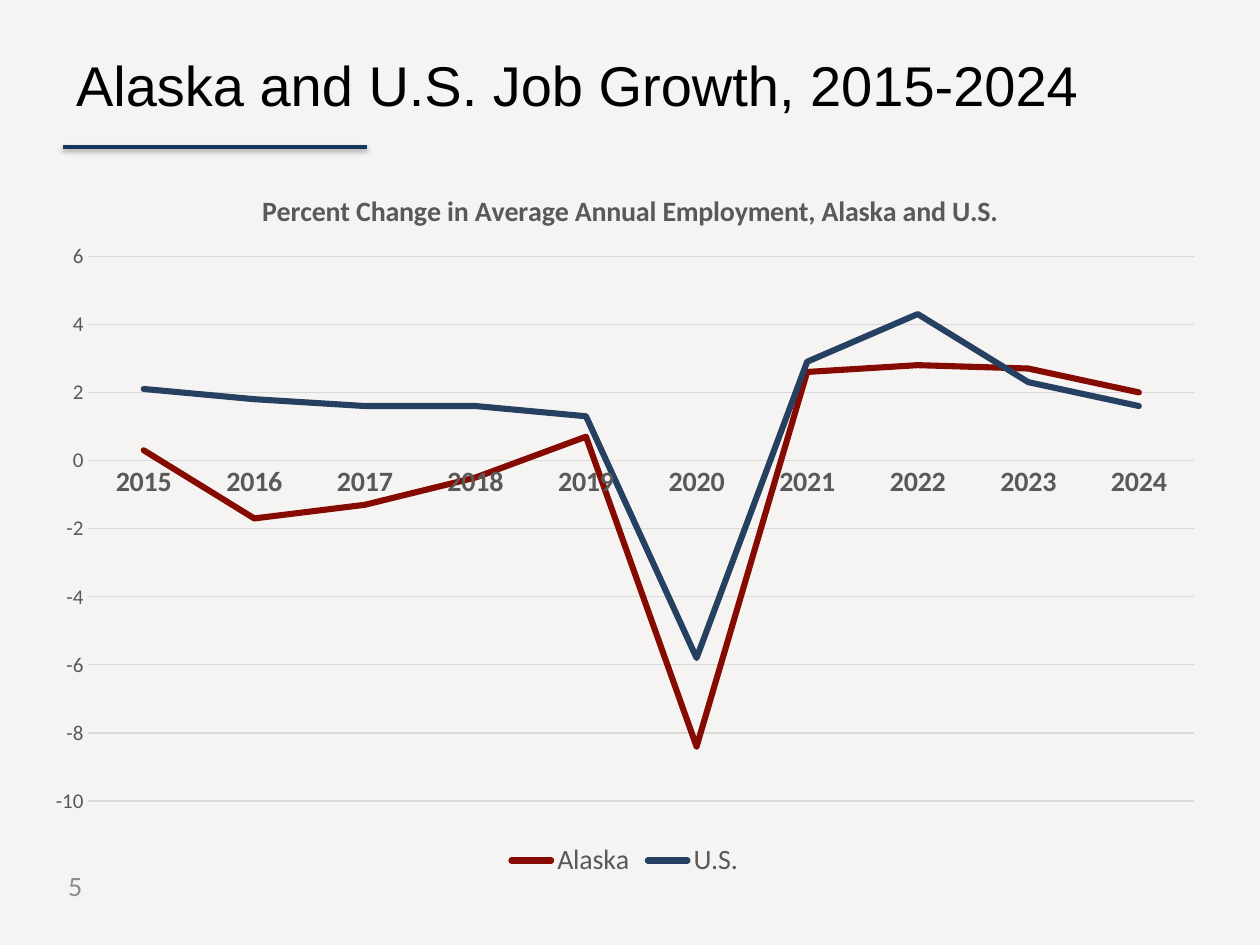
from typing import NamedTuple

from lxml import etree
from pptx import Presentation
from pptx.chart.data import CategoryChartData
from pptx.dml.color import RGBColor
from pptx.enum.chart import XL_CHART_TYPE, XL_LEGEND_POSITION, XL_TICK_MARK
from pptx.enum.shapes import MSO_CONNECTOR
from pptx.enum.text import MSO_ANCHOR, PP_ALIGN
from pptx.oxml import parse_xml
from pptx.oxml.ns import nsdecls, qn
from pptx.util import Pt

LINE_CHART = XL_CHART_TYPE.LINE
LEGEND_BOTTOM = XL_LEGEND_POSITION.BOTTOM
NO_TICK = XL_TICK_MARK.NONE
STRAIGHT = MSO_CONNECTOR.STRAIGHT
MIDDLE = MSO_ANCHOR.MIDDLE
LEFT, RIGHT = PP_ALIGN.LEFT, PP_ALIGN.RIGHT

GRAY, GRID = "595959", "D9D9D9"


class Label(NamedTuple):
    text: str
    left: float
    top: float
    width: float
    height: float
    size: float
    font: str
    color: str
    align: PP_ALIGN
    margin_left: float = 7.2


class Series(NamedTuple):
    name: str
    color: str
    values: tuple[float, ...]


LABELS = [
    Label("5", 0, 491.76, 54, 28.8, 16, "Calibri", "8C8C8C", RIGHT),
    Label("Alaska and U.S. Job Growth, 2015-2024", 27.36, 25.2, 660, 46,
          32, "Arial", "000000", LEFT, 16.1),
]
YEARS = [str(year) for year in range(2015, 2025)]
SERIES = [
    Series("Alaska", "850A01", (0.3, -1.7, -1.3, -0.5, 0.7, -8.4, 2.6, 2.8, 2.7, 2)),
    Series("U.S.", "254061", (2.1, 1.8, 1.6, 1.6, 1.3, -5.8, 2.9, 4.3, 2.3, 1.6)),
]


def rgb(color: str) -> RGBColor:
    return RGBColor.from_string(color)


def set_font(font, size: float, color: str = GRAY, bold: bool = False,
             name: str = "Calibri") -> None:
    font.size, font.bold, font.name = Pt(size), bold, name
    font.color.rgb = rgb(color)


def set_line(line, color: str, width: float) -> None:
    line.color.rgb = rgb(color)
    line.width = Pt(width)


def add_label(slide, label: Label) -> None:
    s = slide.shapes.add_textbox(Pt(label.left), Pt(label.top),
                                 Pt(label.width), Pt(label.height))
    tf = s.text_frame
    tf.word_wrap = True
    tf.vertical_anchor = MIDDLE
    tf.margin_left = Pt(label.margin_left)
    p = tf.paragraphs[0]
    p.alignment = label.align
    r = p.add_run()
    r.text = label.text
    set_font(r.font, label.size, label.color, name=label.font)


def add_title_rule(slide) -> None:
    s = slide.shapes.add_connector(STRAIGHT, Pt(36), Pt(84), Pt(210), Pt(84))
    set_line(s.line, "17375E", 2)
    s._element.spPr.append(parse_xml(
        f'<a:effectLst {nsdecls("a")}><a:outerShdw blurRad="{Pt(3.1)}" '
        f'dist="{Pt(1.6)}" dir="5400000" rotWithShape="0">'
        '<a:srgbClr val="000000"><a:alpha val="38000"/></a:srgbClr>'
        '</a:outerShdw></a:effectLst>'))


def place(element, inner: bool = False, **fractions: float) -> None:
    """Fix a chart part's position as fractions of the chart area."""
    for old in element.findall(qn("c:layout")):
        element.remove(old)
    layout = etree.Element(qn("c:layout"))
    manual = etree.SubElement(layout, qn("c:manualLayout"))
    if inner:
        etree.SubElement(manual, qn("c:layoutTarget"), val="inner")
    for key in ("x", "y"):
        etree.SubElement(manual, qn(f"c:{key}Mode"), val="edge")
    for key, value in fractions.items():
        etree.SubElement(manual, qn(f"c:{key}"), val=str(value))
    text = element.find(qn("c:tx"))
    if text is None:
        element.insert(0, layout)
    else:
        text.addnext(layout)


def add_growth_chart(slide) -> None:
    data = CategoryChartData(number_format="General")
    data.categories = YEARS
    for series in SERIES:
        data.add_series(series.name, series.values)
    chart = slide.shapes.add_chart(LINE_CHART, Pt(18), Pt(90), Pt(678),
                                   Pt(414.72), data).chart
    set_font(chart.font, 10, "000000")

    chart.has_title = True
    r = chart.chart_title.text_frame.paragraphs[0].add_run()
    r.text = "Percent Change in Average Annual Employment, Alaska and U.S."
    set_font(r.font, 16, bold=True)
    chart.chart_title.include_in_layout = False
    place(chart.chart_title._element, x=0.19, y=0.04)

    chart.has_legend = True
    chart.legend.position = LEGEND_BOTTOM
    chart.legend.include_in_layout = False
    set_font(chart.legend.font, 16)

    years, percent = chart.category_axis, chart.value_axis
    for axis in (years, percent):
        axis.major_tick_mark = axis.minor_tick_mark = NO_TICK
    set_font(years.tick_labels.font, 16, bold=True)
    set_line(years.format.line, GRID, 0.75)

    set_font(percent.tick_labels.font, 12)
    percent.tick_labels.number_format = "#,##0"
    percent.tick_labels.number_format_is_linked = False
    percent.minimum_scale, percent.maximum_scale, percent.major_unit = -10, 6, 2
    percent.format.line.fill.background()
    set_line(percent.major_gridlines.format.line, GRID, 0.75)

    plot = chart.plots[0]
    plot.vary_by_categories = False
    for line, series in zip(plot.series, SERIES):
        line.smooth = False
        set_line(line.format.line, series.color, 3.5)
        line.format.line._ln.set("cap", "rnd")
    place(chart._chartSpace.chart.plotArea, inner=True,
          x=0.048, y=0.136, w=0.932, h=0.751)


def main() -> None:
    prs = Presentation()
    prs.slide_width, prs.slide_height = Pt(720), Pt(540)
    slide = prs.slides.add_slide(prs.slide_layouts[6])
    slide.background.fill.solid()
    slide.background.fill.fore_color.rgb = rgb("F6F4F2")
    add_title_rule(slide)
    for label in LABELS:
        add_label(slide, label)
    add_growth_chart(slide)
    prs.save("out.pptx")


if __name__ == "__main__":
    main()
